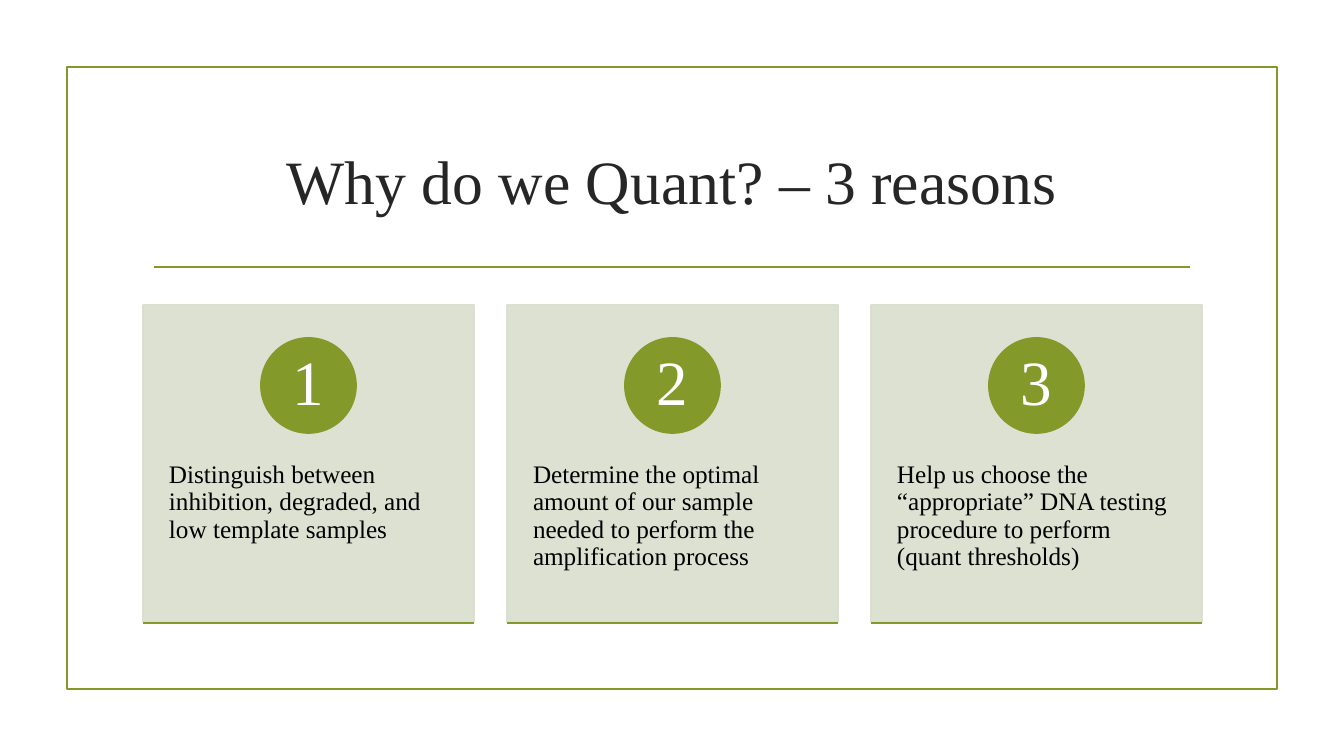
from lxml.etree import SubElement
from pptx import Presentation
from pptx.dml.color import RGBColor
from pptx.enum.shapes import MSO_CONNECTOR, MSO_SHAPE
from pptx.enum.text import MSO_ANCHOR, PP_ALIGN
from pptx.oxml.ns import qn
from pptx.util import Emu, Pt

COLORS = {
    "green": "83992A",
    "sage": "D9DECD",
    "title": "262626",
    "black": "000000",
    "white": "FFFFFF",
}
FONT = "Times New Roman"
LINE_WIDTH = Pt(1.25)
SLIDE_W, SLIDE_H = 1344, 756
CARD_X, CARD_Y, CARD_W, CARD_H = 143, 305, 331, 317
CARD_PITCH = 364
BADGE_SIZE, BADGE_DROP = 95, 33
REASONS = [
    "Distinguish between inhibition, degraded, and low template samples",
    "Determine the optimal amount of our sample needed to perform the amplification process",
    "Help us choose the “appropriate” DNA testing procedure to perform (quant thresholds)",
]


def px(n):
    return Emu(round(n * 12192000 / SLIDE_W))


def rgb(name):
    return RGBColor.from_string(COLORS[name])


def set_alpha(fill_format, percent):
    color = fill_format.fore_color._color._xClr
    SubElement(color, qn("a:alpha")).set("val", str(percent * 1000))


def write(sp, text, size, color, align=PP_ALIGN.LEFT, anchor=MSO_ANCHOR.TOP,
          insets=(0, 0, 0, 0), spacing=None):
    tf = sp.text_frame
    tf.word_wrap = True
    tf.vertical_anchor = anchor
    tf.margin_left, tf.margin_top, tf.margin_right, tf.margin_bottom = map(px, insets)
    p = tf.paragraphs[0]
    p.alignment = align
    if spacing:
        p.line_spacing = spacing
    r = p.add_run()
    r.text = text
    r.font.name = FONT
    r.font.size = Pt(size)
    r.font.color.rgb = rgb(color)


def add_box(s, kind, x, y, w, h, fill=None, line="green", opacity=100):
    sp = s.shapes.add_shape(kind, px(x), px(y), px(w), px(h))
    sp.shadow.inherit = False
    sp.line.color.rgb = rgb(line)
    sp.line.width = LINE_WIDTH
    if fill:
        sp.fill.solid()
        sp.fill.fore_color.rgb = rgb(fill)
    else:
        sp.fill.background()
    if opacity < 100:
        set_alpha(sp.fill, opacity)
        set_alpha(sp.line.fill, opacity)
    return sp


def add_rule(s, x, y, w):
    line = s.shapes.add_connector(MSO_CONNECTOR.STRAIGHT, px(x), px(y), px(x + w), px(y))
    line.line.color.rgb = rgb("green")
    line.line.width = LINE_WIDTH
    SubElement(line._element.spPr, qn("a:effectLst"))


def add_title(s, text):
    title = s.shapes.title
    title.left, title.top, title.width, title.height = map(px, (143, 108, 1058, 144))
    write(title, text, 44, "title", align=PP_ALIGN.CENTER, anchor=MSO_ANCHOR.MIDDLE)


def add_card(s, number, reason):
    x = CARD_X + (number - 1) * CARD_PITCH
    card = add_box(s, MSO_SHAPE.RECTANGLE, x, CARD_Y, CARD_W, CARD_H,
                   fill="sage", line="sage", opacity=90)
    write(card, reason, 18, "black", insets=(26, 157, 26, 36), spacing=0.9)
    badge = add_box(s, MSO_SHAPE.OVAL, x + (CARD_W - BADGE_SIZE) / 2, CARD_Y + BADGE_DROP,
                    BADGE_SIZE, BADGE_SIZE, fill="green")
    write(badge, str(number), 45, "white", align=PP_ALIGN.CENTER,
          anchor=MSO_ANCHOR.MIDDLE, insets=(7, 1, 7, 1), spacing=0.9)
    add_rule(s, x, CARD_Y + CARD_H + 1, CARD_W)


def main():
    prs = Presentation()
    prs.slide_width, prs.slide_height = px(SLIDE_W), px(SLIDE_H)
    s = prs.slides.add_slide(prs.slide_layouts[5])
    add_box(s, MSO_SHAPE.RECTANGLE, 67, 67, 1210, 622)
    add_title(s, "Why do we Quant? – 3 reasons")
    add_rule(s, 154, 267, 1036)
    for number, reason in enumerate(REASONS, 1):
        add_card(s, number, reason)
    prs.save("out.pptx")


if __name__ == "__main__":
    main()
